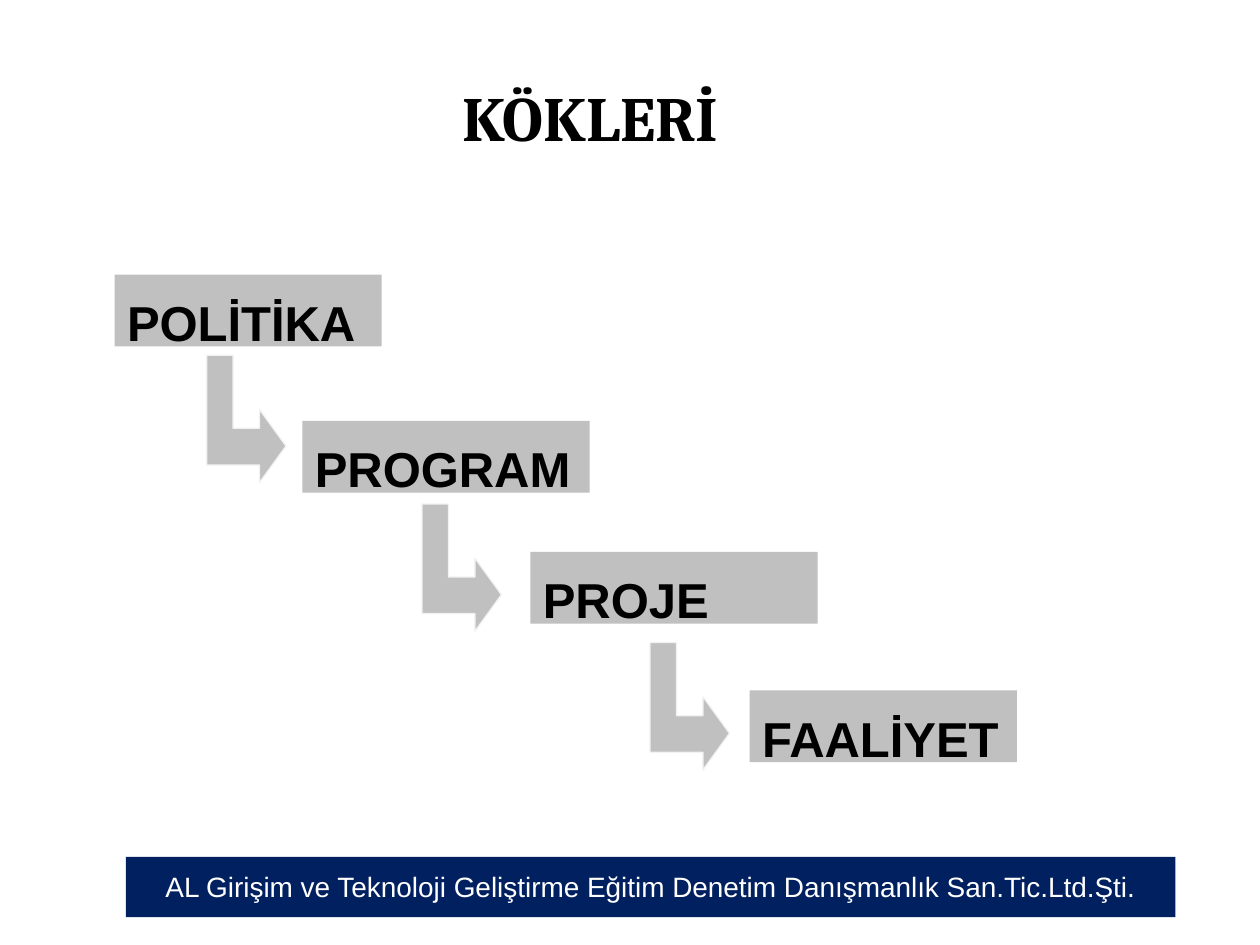
from dataclasses import dataclass

import pptx
import pptx.dml.color
import pptx.enum.shapes
import pptx.enum.text
import pptx.util

Inches = pptx.util.Inches
ALIGN = pptx.enum.text.PP_ALIGN
ANCHOR = pptx.enum.text.MSO_ANCHOR


@dataclass(frozen=True)
class Theme:
    step_fill: str = "C0C0C0"
    arrow_edge: str = "F2F2F2"
    footer_fill: str = "002060"
    dark_text: str = "000000"
    light_text: str = "FFFFFF"
    heading_font: str = "Cambria"
    body_font: str = "Arial"
    title_size: int = 36
    step_size: int = 28
    footer_size: int = 16
    line_spacing: float = 1.2


THEME = Theme()

STEP_HEIGHT = 0.57
STEPS = [  # label, left, top, width
    ("POLİTİKA", 0.91, 2.18, 2.12),
    ("PROGRAM", 2.4, 3.34, 2.28),
    ("PROJE", 4.21, 4.38, 2.28),
    ("FAALİYET", 5.95, 5.48, 2.12),
]
ARROW_CORNERS = [(1.64, 2.82), (3.35, 4), (5.16, 5.1)]
ARROW_OUTLINE = [
    (0, 0), (0.21, 0), (0.21, 0.58), (0.42, 0.58), (0.42, 0.43),
    (0.63, 0.72), (0.42, 1.01), (0.42, 0.87), (0, 0.87),
]


def rgb(value):
    return pptx.dml.color.RGBColor.from_string(value)


def write_text(frame, text, *, size, color, font=THEME.body_font, bold=False,
               align=ALIGN.LEFT, anchor=ANCHOR.TOP):
    frame.word_wrap = True
    frame.vertical_anchor = anchor
    paragraph = frame.paragraphs[0]
    paragraph.alignment = align
    paragraph.line_spacing = THEME.line_spacing
    run = paragraph.add_run()
    run.text = text
    run.font.name = font
    run.font.size = pptx.util.Pt(size)
    run.font.bold = bold
    run.font.color.rgb = rgb(color)


class SlideBuilder:
    def __init__(self, slide, theme):
        self.shapes = slide.shapes
        self.theme = theme

    def box(self, left, top, width, height, fill, text, **text_format):
        """Add a borderless filled rectangle holding one line of text."""
        box = self.shapes.add_shape(
            pptx.enum.shapes.MSO_SHAPE.RECTANGLE,
            Inches(left), Inches(top), Inches(width), Inches(height))
        box.shadow.inherit = False
        box.fill.solid()
        box.fill.fore_color.rgb = rgb(fill)
        box.line.fill.background()
        write_text(box.text_frame, text, **text_format)

    def title(self, left, top, width, height, text):
        title = self.shapes.add_textbox(
            Inches(left), Inches(top), Inches(width), Inches(height))
        frame = title.text_frame
        frame.margin_left = frame.margin_right = Inches(0.05)
        write_text(frame, text, size=self.theme.title_size,
                   color=self.theme.dark_text, font=self.theme.heading_font,
                   bold=True, align=ALIGN.CENTER, anchor=ANCHOR.MIDDLE)

    def step(self, label, left, top, width):
        self.box(left, top, width, STEP_HEIGHT, self.theme.step_fill, label,
                 size=self.theme.step_size, color=self.theme.dark_text,
                 bold=True)

    def bent_arrow(self, left, top):
        """Add an arrow that goes down from its corner and turns right."""
        start, *rest = [(Inches(left + x), Inches(top + y))
                        for x, y in ARROW_OUTLINE]
        outline = self.shapes.build_freeform(*start)
        outline.add_line_segments(rest, close=True)
        arrow = outline.convert_to_shape()
        arrow.shadow.inherit = False
        arrow.fill.solid()
        arrow.fill.fore_color.rgb = rgb(self.theme.step_fill)
        arrow.line.color.rgb = rgb(self.theme.arrow_edge)
        arrow.line.width = pptx.util.Pt(0.75)

    def footer(self, left, top, width, height, text):
        self.box(left, top, width, height, self.theme.footer_fill, text,
                 size=self.theme.footer_size, color=self.theme.light_text,
                 align=ALIGN.CENTER)


def main():
    presentation = pptx.Presentation()
    presentation.slide_width = Inches(10)
    presentation.slide_height = Inches(7.5)
    slide = presentation.slides.add_slide(presentation.slide_layouts[6])
    builder = SlideBuilder(slide, THEME)

    builder.footer(1, 6.8, 8.33, 0.48,
                   "AL Girişim ve Teknoloji Geliştirme Eğitim Denetim "
                   "Danışmanlık San.Tic.Ltd.Şti.")
    builder.title(2.6, 0.52, 4.17, 0.69, "KÖKLERİ")
    for step in STEPS:
        builder.step(*step)
    for corner in ARROW_CORNERS:
        builder.bent_arrow(*corner)

    presentation.save("out.pptx")


if __name__ == "__main__":
    main()
